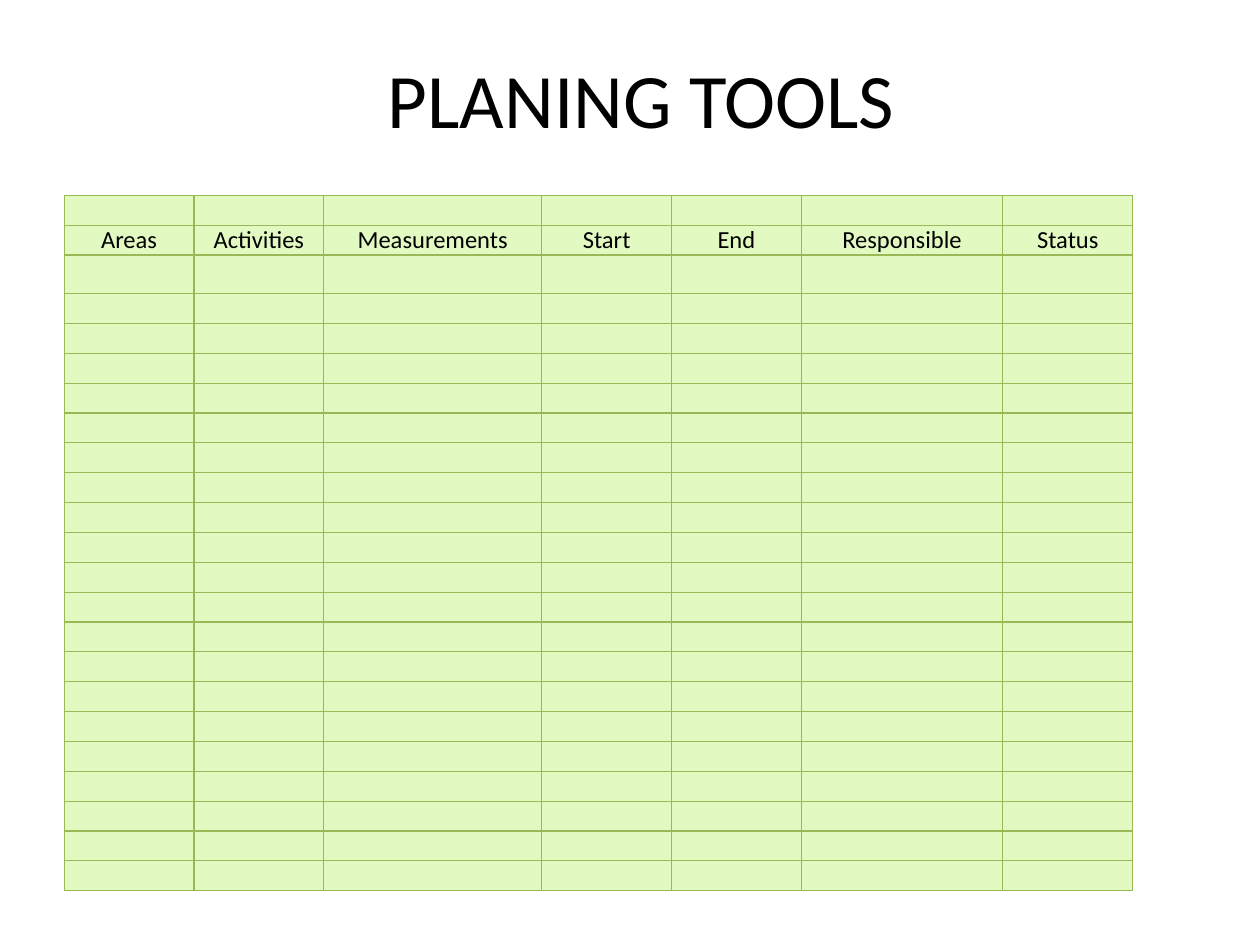
from lxml import etree
from pptx import Presentation
from pptx import util as u
from pptx.dml.color import RGBColor
from pptx.enum import text
from pptx.oxml.ns import qn

TITLE = "PLANING TOOLS"
COLUMNS = [
    ("Areas", 1.03), ("Activities", 1.03), ("Measurements", 1.73),
    ("Start", 1.03), ("End", 1.03), ("Responsible", 1.6), ("Status", 1.03),
]
ROW_COUNT = 23
HEADING_ROW = 1
TALL_ROW = 2
FONT = "Calibri"
BLACK, GREEN, PALE_GREEN = "000000", "98B955", "E2FAC2"
TABLE_LEFT, TABLE_TOP, TABLE_HEIGHT = 0.51, 1.55, 5.43


def color(value):
    return RGBColor.from_string(value)


def add_run(paragraph, words, size):
    paragraph.alignment = text.PP_ALIGN.CENTER
    run = paragraph.add_run()
    run.text = words
    run.font.name = FONT
    run.font.size = u.Pt(size)
    run.font.color.rgb = color(BLACK)


def set_empty_size(paragraph, size):
    """Give a paragraph without runs the text size that sets its row height."""
    mark = etree.SubElement(paragraph._p, qn("a:endParaRPr"))
    mark.set("sz", str(size * 100))


def add_borders(cell, line_color, width):
    properties = cell._tc.get_or_add_tcPr()
    for side in ("lnL", "lnR", "lnT", "lnB"):
        line = etree.SubElement(properties, qn("a:" + side), w=str(u.Pt(width)))
        fill = etree.SubElement(line, qn("a:solidFill"))
        etree.SubElement(fill, qn("a:srgbClr"), val=line_color)


def format_cell(cell):
    cell.margin_left = cell.margin_right = cell.margin_top = cell.margin_bottom = 0
    cell.vertical_anchor = text.MSO_ANCHOR.MIDDLE
    add_borders(cell, GREEN, 0.75)
    cell.fill.solid()
    cell.fill.fore_color.rgb = color(PALE_GREEN)


def add_title(slide):
    title = slide.shapes.title
    title.left, title.top = u.Inches(0.59), u.Inches(0.15)
    title.width, title.height = u.Inches(9), u.Inches(1.25)
    title.text_frame.vertical_anchor = text.MSO_ANCHOR.MIDDLE
    add_run(title.text_frame.paragraphs[0], TITLE, 44)


def add_plan(slide):
    table_width = sum(width for _, width in COLUMNS)
    table = slide.shapes.add_table(
        ROW_COUNT, len(COLUMNS), u.Inches(TABLE_LEFT), u.Inches(TABLE_TOP),
        u.Inches(table_width), u.Inches(TABLE_HEIGHT)).table
    table.first_row = table.horz_banding = False
    for column, (_, width) in zip(table.columns, COLUMNS):
        column.width = u.Inches(width)
    for row_index, row in enumerate(table.rows):
        for cell, (heading, _) in zip(row.cells, COLUMNS):
            format_cell(cell)
            paragraph = cell.text_frame.paragraphs[0]
            if row_index == HEADING_ROW:
                add_run(paragraph, heading, 14)
            else:
                set_empty_size(paragraph, 18 if row_index == TALL_ROW else 14)


def main():
    presentation = Presentation()
    presentation.slide_width, presentation.slide_height = u.Inches(10), u.Inches(7.5)
    slide = presentation.slides.add_slide(presentation.slide_layouts[5])
    add_title(slide)
    add_plan(slide)
    presentation.save("out.pptx")


if __name__ == "__main__":
    main()
